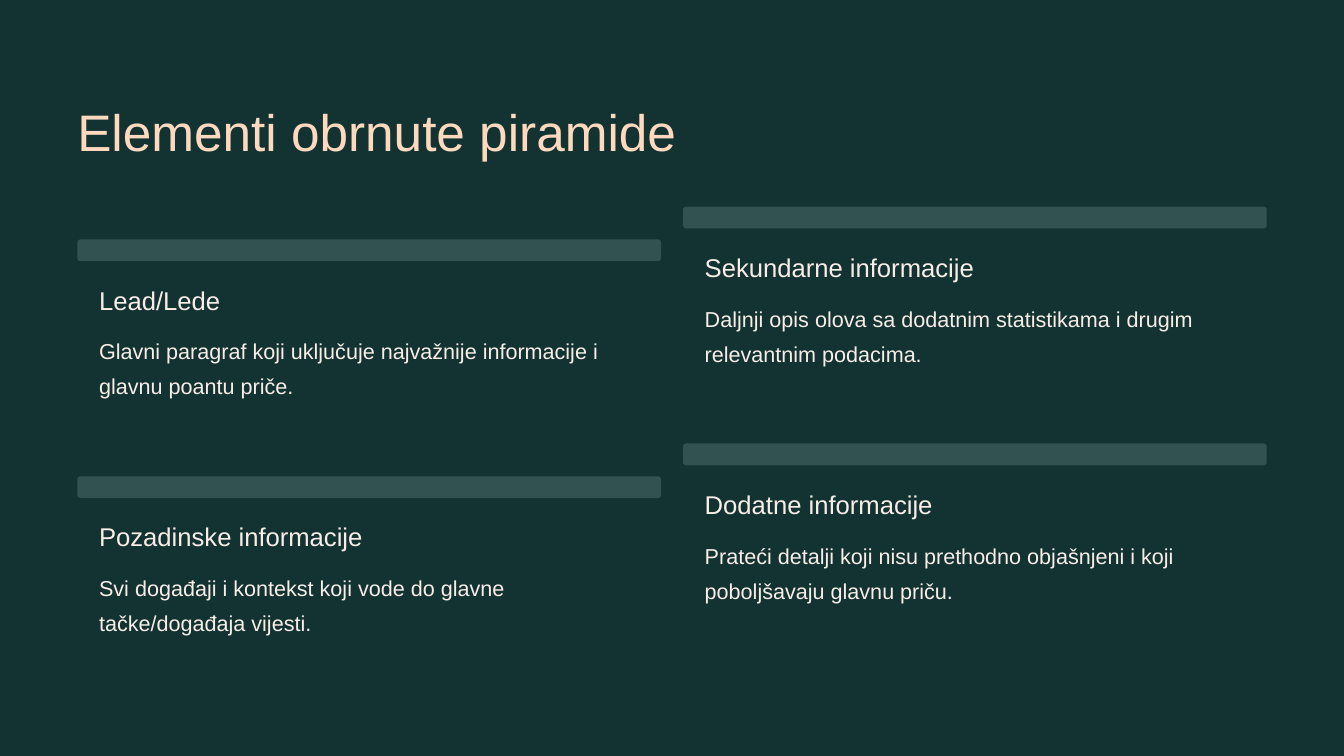
from pptx import Presentation
from pptx.dml.color import RGBColor
from pptx.enum.shapes import MSO_SHAPE
from pptx.enum.text import MSO_ANCHOR, PP_ALIGN
from pptx.util import Inches, Pt

GREEN = RGBColor(0x12, 0x33, 0x32)
BAR_GREEN = RGBColor(0x31, 0x52, 0x51)
PEACH = RGBColor(0xFF, 0xD9, 0xBE)
CREAM = RGBColor(0xF9, 0xEE, 0xE7)

MARGIN = 0.92
GAP = 0.26  # bar height, text indent and gutter
CARD_WIDTH = 6.95
GRID_TOP = 2.85
ROW_PITCH = 2.82
RIGHT_COLUMN_RISE = 0.39

TITLE = "Elementi obrnute piramide"
CARDS = [
    ("Lead/Lede",
     "Glavni paragraf koji uključuje najvažnije informacije i glavnu poantu priče."),
    ("Sekundarne informacije",
     "Daljnji opis olova sa dodatnim statistikama i drugim relevantnim podacima."),
    ("Pozadinske informacije",
     "Svi događaji i kontekst koji vode do glavne tačke/događaja vijesti."),
    ("Dodatne informacije",
     "Prateći detalji koji nisu prethodno objašnjeni i koji poboljšavaju glavnu priču."),
]


def add_text(slide, text, left, top, width, height, size, leading, color, wrap=False):
    """Add a one-paragraph box without insets; size and leading are in points."""
    box = slide.shapes.add_textbox(
        Inches(left), Inches(top), Inches(width), Inches(height))
    frame = box.text_frame
    frame.margin_left = frame.margin_top = frame.margin_right = frame.margin_bottom = 0
    frame.word_wrap = wrap
    frame.vertical_anchor = MSO_ANCHOR.TOP
    paragraph = frame.paragraphs[0]
    paragraph.text = text
    paragraph.alignment = PP_ALIGN.LEFT
    paragraph.line_spacing = Pt(leading)
    paragraph.font.name = "Arial"
    paragraph.font.size = Pt(size)
    paragraph.font.color.rgb = color


def add_card(slide, heading, body, left, top, width):
    bar = slide.shapes.add_shape(
        MSO_SHAPE.ROUNDED_RECTANGLE,
        Inches(left), Inches(top), Inches(width), Inches(GAP))
    bar.adjustments[0] = 0.15
    bar.shadow.inherit = False
    bar.fill.solid()
    bar.fill.fore_color.rgb = BAR_GREEN
    bar.line.fill.background()

    text_left, text_width = left + GAP, width - 2 * GAP
    add_text(slide, heading, text_left, top + 2 * GAP, text_width / 2, 0.38,
             22, 27.5, CREAM)
    add_text(slide, body, text_left, top + 1.07, text_width, 0.84,
             18.5, 30, CREAM, wrap=True)


def add_elements_slide(presentation):
    slide = presentation.slides.add_slide(presentation.slide_layouts[6])
    slide.background.fill.solid()
    slide.background.fill.fore_color.rgb = GREEN
    add_text(slide, TITLE, MARGIN, 1.16, 9.3, 0.77, 44, 55, PEACH)
    for index, (heading, body) in enumerate(CARDS):
        row, column = divmod(index, 2)
        add_card(slide, heading, body,
                 MARGIN + column * (CARD_WIDTH + GAP),
                 GRID_TOP + row * ROW_PITCH - column * RIGHT_COLUMN_RISE,
                 CARD_WIDTH)


def main():
    presentation = Presentation()
    presentation.slide_width = Inches(16)
    presentation.slide_height = Inches(9)
    add_elements_slide(presentation)
    presentation.save("out.pptx")


if __name__ == "__main__":
    main()
